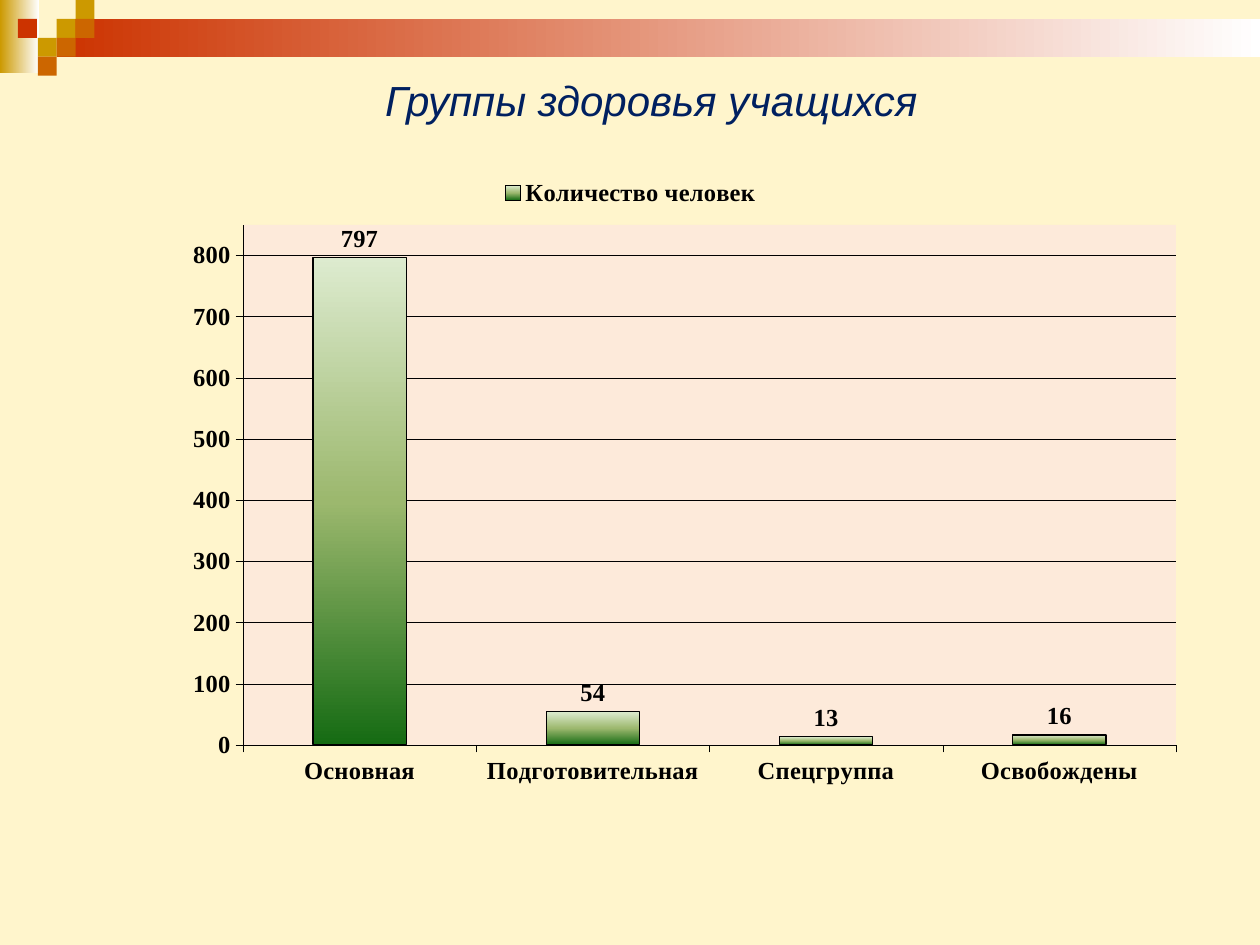
from lxml import etree
from pptx import Presentation
from pptx.chart.data import CategoryChartData
from pptx.dml.color import RGBColor
from pptx.enum import chart as ch, shapes, text
from pptx.oxml import parse_xml
from pptx.oxml.ns import nsdecls, qn
from pptx.util import Pt

# Content
TITLE = "Группы здоровья учащихся"
SERIES = "Количество человек"
GROUPS = {"Основная": 797, "Подготовительная": 54, "Спецгруппа": 13, "Освобождены": 16}

THEME = {
    "back": "FFF5CC", "title": "002060", "ink": "000000", "plot": "FDEADA",
    "gold": "CC9900", "rust": "CC6600", "red": "CC3300", "white": "FFFFFF",
    "bar": [(0, "DDEBCF"), (50, "9CB86E"), (100, "156B13")],
    "head": "Arial", "body": "Times New Roman", "big": 24, "small": 14,
    "hair": 0.17, "edge": 0.67,
}

# Decoration: fading bands (left, top, width, height, colour), then tiles
BANDS = [(0, 0, 22.3, 41.8, "gold"), (32.4, 10.8, 687.6, 21.6, "red")]
TILE = 10.8
TILES = [(3, 1, "gold"), (4, 0, "gold"), (4, 1, "rust"), (2, 2, "gold"),
         (0.95, 1, "red"), (3, 2, "rust"), (2, 3, "rust")]
PLOT = {"x": 0.154, "y": 0.091, "w": 0.833, "h": 0.791}


def rgb(key):
    return RGBColor.from_string(THEME[key])


def paint(fill, key):
    fill.solid()
    fill.fore_color.rgb = rgb(key)


def blend(fill, root, stops, angle):
    """Gradient with any number of stops; angle is counter-clockwise."""
    fill.gradient()
    fill.gradient_angle = angle
    ramp = next(root.iter(qn("a:gsLst")))
    for old in list(ramp):
        ramp.remove(old)
    for place, color in stops:
        stop = etree.SubElement(ramp, qn("a:gs"), pos=str(place * 1000))
        etree.SubElement(stop, qn("a:srgbClr"), val=color)


def style(font, **extra):
    base = {"name": THEME["body"], "size": Pt(THEME["small"]), "bold": True}
    for name, value in {**base, **extra}.items():
        setattr(font, name, value)
    font.color.rgb = rgb("ink")


def rule(line, width):
    paint(line.fill, "ink")
    line.width = Pt(width)


def block(slide, *box):
    shape = slide.shapes.add_shape(shapes.MSO_SHAPE.RECTANGLE, *map(Pt, box))
    shape.shadow.inherit = False
    shape.line.fill.background()
    return shape


def decorate(slide):
    for *box, key in BANDS:
        band = block(slide, *box)
        stops = [(0, THEME[key]), (100, THEME["white"])]
        blend(band.fill, band._element, stops, 0)
    for col, row, key in TILES:
        paint(block(slide, col * TILE, row * TILE, TILE, TILE).fill, key)


def add_title(slide):
    title = slide.shapes.title
    slide.shapes._spTree.append(title._element)  # in front of the bands
    place = {"left": 48.2, "top": 30.2, "width": 648, "height": 54}
    for name, value in place.items():
        setattr(title, name, Pt(value))
    frame = title.text_frame
    frame.text = TITLE
    frame.vertical_anchor = text.MSO_ANCHOR.MIDDLE
    para = frame.paragraphs[0]
    para.alignment = text.PP_ALIGN.CENTER
    font = para.runs[0].font
    style(font, name=THEME["head"], size=Pt(THEME["big"]), bold=False, italic=True)
    font.color.rgb = rgb("title")


def set_plot(chart):
    area = next(chart._chartSpace.iter(qn("c:plotArea")))
    for old in area.findall(qn("c:layout")):
        area.remove(old)
    parts = '<c:layoutTarget val="inner"/><c:xMode val="edge"/><c:yMode val="edge"/>'
    parts += "".join(f'<c:{k} val="{v}"/>' for k, v in PLOT.items())
    area.insert(0, parse_xml(
        f'<c:layout {nsdecls("c")}><c:manualLayout>{parts}</c:manualLayout></c:layout>'))
    area.append(parse_xml(
        f'<c:spPr {nsdecls("c", "a")}><a:solidFill>'
        f'<a:srgbClr val="{THEME["plot"]}"/></a:solidFill></c:spPr>'))


def add_chart(slide):
    data = CategoryChartData()
    data.categories = list(GROUPS)
    data.add_series(SERIES, list(GROUPS.values()))
    box = map(Pt, (40.3, 94.3, 640, 375.8))
    chart = slide.shapes.add_chart(ch.XL_CHART_TYPE.COLUMN_CLUSTERED, *box, data).chart
    style(chart.font)
    chart.has_title = False

    # Legend
    chart.has_legend = True
    chart.legend.position = ch.XL_LEGEND_POSITION.TOP
    chart.legend.include_in_layout = False
    style(chart.legend.font)

    # Axes
    for axis in (chart.category_axis, chart.value_axis):
        style(axis.tick_labels.font)
        rule(axis.format.line, THEME["hair"])
        axis.major_tick_mark = ch.XL_TICK_MARK.OUTSIDE
    chart.category_axis.tick_label_position = ch.XL_TICK_LABEL_POSITION.LOW
    scale = {"minimum_scale": 0, "maximum_scale": 850, "major_unit": 100,
             "has_major_gridlines": True}
    for name, value in scale.items():
        setattr(chart.value_axis, name, value)
    rule(chart.value_axis.major_gridlines.format.line, THEME["hair"])

    # Columns and their values
    plot = chart.plots[0]
    plot.gap_width = 150
    plot.vary_by_categories = False
    bars = plot.series[0]
    blend(bars.format.fill, bars._element, THEME["bar"], 270)
    rule(bars.format.line, THEME["edge"])
    labels = bars.data_labels
    labels.show_value = True
    labels.position = ch.XL_LABEL_POSITION.OUTSIDE_END
    style(labels.font)
    set_plot(chart)


def main():
    deck = Presentation()
    deck.slide_width, deck.slide_height = Pt(720), Pt(540)
    slide = deck.slides.add_slide(deck.slide_layouts[5])
    paint(slide.background.fill, "back")
    decorate(slide)
    add_title(slide)
    add_chart(slide)
    deck.save("out.pptx")


if __name__ == "__main__":
    main()
